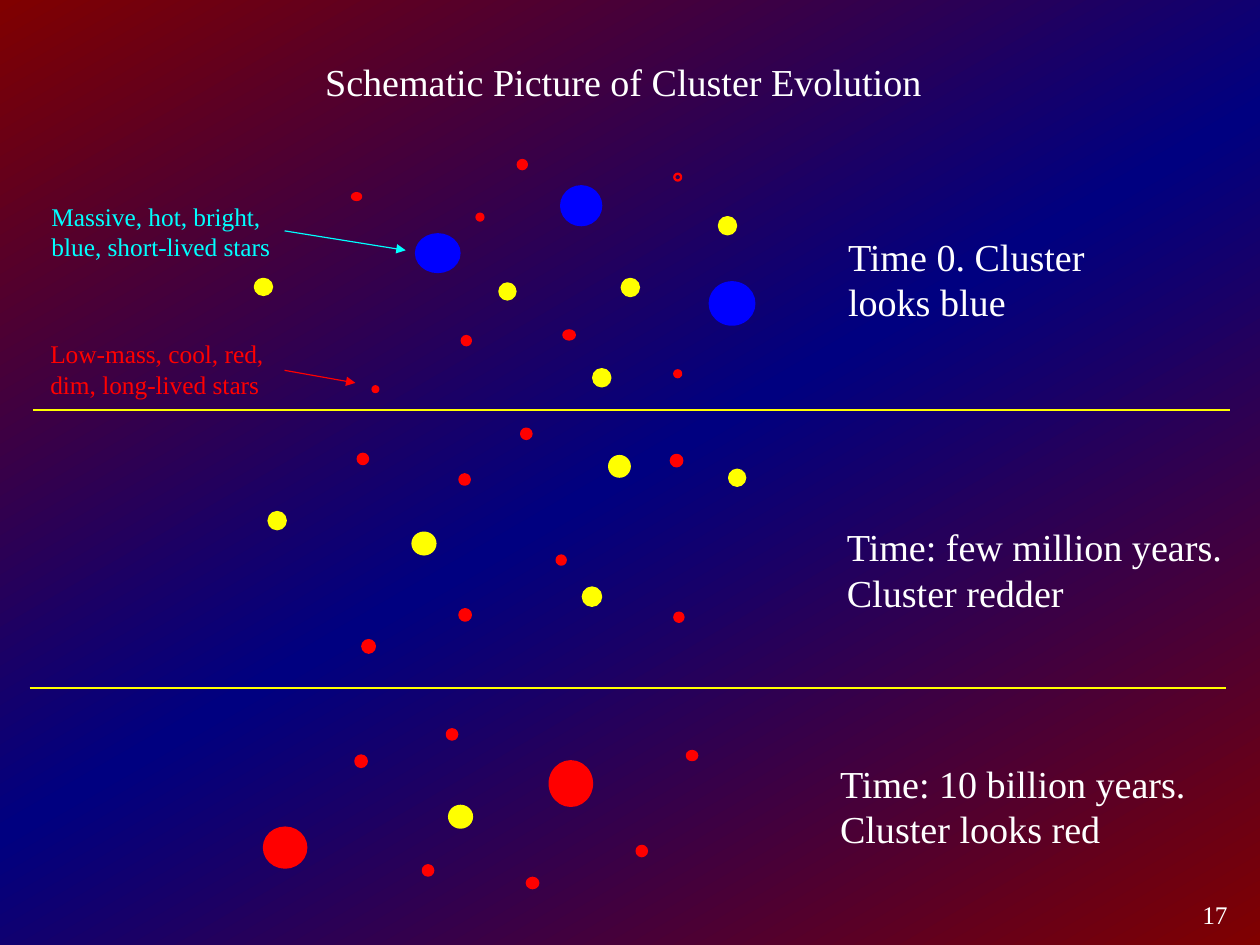
"""Builds the slide on how a star cluster changes colour as it ages."""
from copy import deepcopy
from dataclasses import dataclass

from lxml.etree import SubElement
from pptx import Presentation
from pptx.dml.color import RGBColor
from pptx.enum.shapes import MSO_CONNECTOR, MSO_SHAPE
from pptx.enum.text import MSO_ANCHOR, PP_ALIGN
from pptx.oxml.ns import qn
from pptx.util import Emu, Pt

SLIDE_SIZE = Emu(10080625), Emu(7559675)
TITLE = ("Schematic Picture of Cluster Evolution", (222, 51, 647, 72))
STAGES = [
    ("Time 0. Cluster looks blue", (742, 204, 270, 80)),
    ("Time: few million years.\nCluster redder", (741, 458, 337, 80)),
    ("Time: 10 billion years.\nCluster looks red", (735, 665, 358, 80)),
]
LABELS = [
    ("Massive, hot, bright, blue, short-lived stars", "cyan",
     (45, 176, 215, 50), (249, 202, 355, 219)),
    ("Low-mass, cool, red, dim, long-lived stars", "red",
     (44, 296, 224, 50), (249, 324, 311, 335)),
]
DIVIDERS = [(29, 359, 1076, 359), (26, 602, 1073, 602)]
PAGE = ("17", (827, 778, 257, 44))
HOLLOW_STAR = (590, 152, 6, 6)
CLUSTERS = [
    {
        "blue": [(364, 205, 38, 33), (491, 163, 35, 34), (621, 247, 39, 37)],
        "red": [(308, 169, 8, 6), (417, 187, 6, 6), (493, 289, 10, 8),
                (326, 338, 5, 5), (590, 324, 6, 6), (404, 294, 8, 8),
                (453, 140, 8, 8)],
        "yellow": [(223, 244, 15, 14), (437, 248, 14, 14), (629, 190, 15, 15),
                   (544, 244, 15, 15), (519, 323, 15, 15)],
    },
    {
        "yellow": [(235, 448, 15, 15), (361, 466, 20, 19), (533, 399, 18, 18),
                   (638, 411, 14, 14), (510, 514, 16, 16)],
        "red": [(313, 397, 9, 9), (402, 415, 9, 9), (456, 375, 9, 9),
                (587, 398, 10, 10), (317, 560, 11, 11), (402, 533, 10, 10),
                (487, 486, 8, 8), (590, 536, 8, 8)],
    },
    {
        "red": [(311, 661, 10, 10), (391, 638, 9, 9), (481, 666, 37, 39),
                (601, 657, 9, 8), (370, 757, 9, 9), (557, 740, 9, 9),
                (461, 768, 10, 9), (231, 724, 37, 35)],
        "yellow": [(393, 705, 20, 19)],
    },
]


@dataclass(frozen=True)
class Theme:
    """Colours, type and line sizes of the slide."""
    white: str = "FFFFFF"
    blue: str = "0000FF"
    red: str = "FF0000"
    yellow: str = "FFFF00"
    cyan: str = "00FFFF"
    backdrop: tuple = ("800000", "000080", "800000")
    font: str = "Times New Roman"
    large: int = 24
    small: int = 16
    line: float = 1.45
    arrow: float = 0.75

    def rgb(self, name):
        return RGBColor.from_string(getattr(self, name))


THEME = Theme()
PX = 9144


def emu(box):
    return [v * PX for v in box]


def write(sp, text, size=THEME.large, color="white", align=PP_ALIGN.LEFT,
          anchor=MSO_ANCHOR.TOP, inset=0):
    tf = sp.text_frame
    tf.word_wrap = True
    tf.vertical_anchor = anchor
    tf.margin_left = tf.margin_right = inset * PX
    tf.margin_top = tf.margin_bottom = inset * PX // 2
    for i, line in enumerate(text.split("\n")):
        p = tf.add_paragraph() if i else tf.paragraphs[0]
        p.alignment = align
        r = p.add_run()
        r.text = line
        r.font.name = THEME.font
        r.font.size = Pt(size)
        r.font.color.rgb = THEME.rgb(color)


def add_text(s, text, box, **fmt):
    write(s.shapes.add_textbox(*emu(box)), text, **fmt)


def add_star(s, box, color, filled=True):
    sp = s.shapes.add_shape(MSO_SHAPE.OVAL, *emu(box))
    sp.shadow.inherit = False
    if filled:
        sp.fill.solid()
        sp.fill.fore_color.rgb = THEME.rgb(color)
    else:
        sp.fill.background()
    sp.line.color.rgb = THEME.rgb(color)
    sp.line.width = Pt(THEME.line)


def add_line(s, ends, color, width, arrow=False):
    c = s.shapes.add_connector(MSO_CONNECTOR.STRAIGHT, *emu(ends))
    c.line.color.rgb = THEME.rgb(color)
    c.line.width = Pt(width)
    if arrow:
        SubElement(c.line._get_or_add_ln(), qn("a:tailEnd"), type="triangle")
    SubElement(c._element.spPr, qn("a:effectLst"))


def paint_background(s):
    fill = s.background.fill
    fill.gradient()
    fill.gradient_angle = 300
    stops = s.element.find(".//" + qn("a:gsLst"))
    stops.insert(1, deepcopy(stops[0]))
    last = len(THEME.backdrop) - 1
    for i, (stop, color) in enumerate(zip(fill.gradient_stops, THEME.backdrop)):
        stop.position = i / last
        stop.color.rgb = RGBColor.from_string(color)


def main():
    prs = Presentation()
    prs.slide_width, prs.slide_height = SLIDE_SIZE
    s = prs.slides.add_slide(prs.slide_layouts[5])
    paint_background(s)

    title = s.shapes.title
    text, box = TITLE
    title.left, title.top, title.width, title.height = emu(box)
    write(title, text, align=PP_ALIGN.CENTER)

    for cluster in CLUSTERS:
        for color, stars in cluster.items():
            for star in stars:
                add_star(s, star, color)
    add_star(s, HOLLOW_STAR, "red", filled=False)

    for ends in DIVIDERS:
        add_line(s, ends, "yellow", THEME.line)
    for text, box in STAGES:
        add_text(s, text, box)
    for text, color, box, ends in LABELS:
        add_text(s, text, box, size=THEME.small, color=color)
        add_line(s, ends, color, THEME.arrow, arrow=True)
    add_text(s, *PAGE, size=THEME.small, align=PP_ALIGN.RIGHT,
             anchor=MSO_ANCHOR.MIDDLE, inset=10)
    prs.save("out.pptx")


if __name__ == "__main__":
    main()
